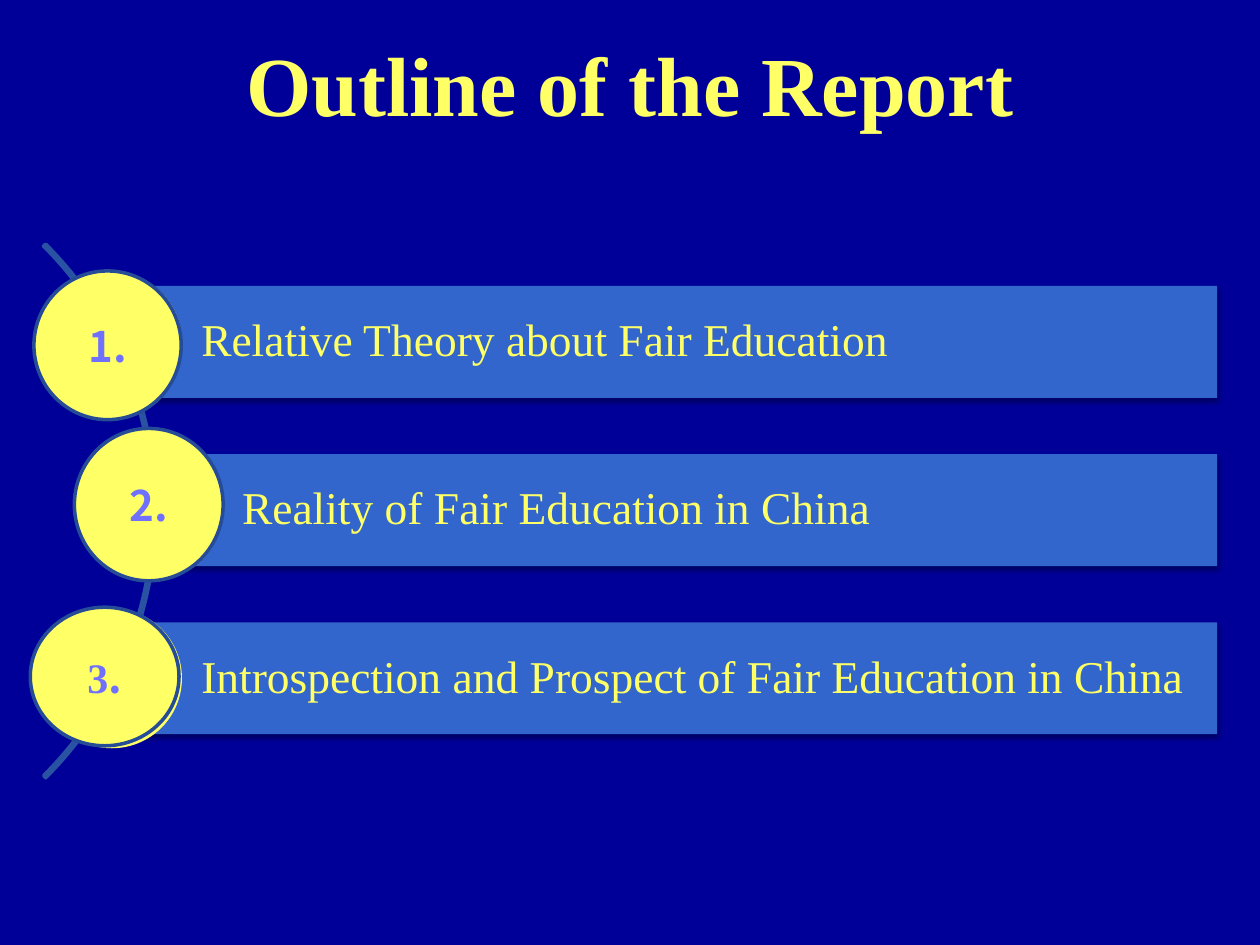
from lxml import etree
from pptx import Presentation
from pptx import util as u
from pptx.dml.color import RGBColor
from pptx.enum import shapes, text
from pptx.oxml import parse_xml
from pptx.oxml.ns import nsdecls, qn

NAVY = RGBColor(0x00, 0x00, 0x99)
YELLOW = RGBColor(0xFF, 0xFF, 0x66)
BAR_BLUE = RGBColor(0x33, 0x66, 0xCC)
ARC_BLUE = RGBColor(0x29, 0x52, 0xA3)
BADGE_EDGE = RGBColor(0x26, 0x4B, 0x97)
VIOLET = RGBColor(0x70, 0x70, 0xFF)

SERIF = "Times New Roman"
SANS = "Noto Sans CJK SC"

BAR_TOP = 163.4
BAR_PITCH = 96.1
BAR_HEIGHT = 64
BAR_RIGHT = 695.6
DISC_SIZE = 80

TOPICS = [
    (64, "Relative Theory about Fair Education"),
    (87.3, "Reality of Fair Education in China"),
    (64, "Introspection and Prospect of Fair Education in China"),
]
BADGES = [
    ((19.4, 154.8, 84.2, 85), [("1.", SANS)]),
    ((17.3, 347, 85, 79.2), [("3", SERIF), (".", SANS)]),
    ((42.5, 244.8, 85, 87.1), [("2.", SANS)]),
]


def add_shape(slide, kind, box, fill=None, line=None):
    shape = slide.shapes.add_shape(kind, *map(u.Pt, box))
    shape.shadow.inherit = False
    if fill is None:
        shape.fill.background()
    else:
        shape.fill.solid()
        shape.fill.fore_color.rgb = fill
    if line is None:
        shape.line.fill.background()
    else:
        shape.line.color.rgb = line
        shape.line.width = u.Pt(2)
    return shape


def format_run(run, name, size, color, bold=False):
    run.font.name = name
    run.font.size = u.Pt(size)
    run.font.color.rgb = color
    run.font.bold = bold
    properties = run._r.get_or_add_rPr()
    etree.SubElement(properties, qn("a:ea")).set("typeface", name)


def add_bar_shadow(shape):
    effects = shape._element.spPr.find(qn("a:effectLst"))
    effects.append(parse_xml(
        f'<a:outerShdw {nsdecls("a")} blurRad="{u.Pt(3.1)}" dist="{u.Pt(1.8)}" '
        'dir="5400000" rotWithShape="0"><a:srgbClr val="000000">'
        '<a:alpha val="35000"/></a:srgbClr></a:outerShdw>'))


def add_title(slide, wording):
    frame = slide.shapes.add_textbox(*map(u.Pt, (0, 15, 720, 65.5))).text_frame
    frame.word_wrap = True
    frame.text = wording
    paragraph = frame.paragraphs[0]
    paragraph.alignment = text.PP_ALIGN.CENTER
    format_run(paragraph.runs[0], SERIF, 48, YELLOW, True)


def add_arc(slide):
    arc = add_shape(slide, shapes.MSO_SHAPE.BLOCK_ARC,
                    (-342, 76.3, 431.3, 431.3), line=ARC_BLUE)
    for index, value in enumerate((189, 27, 0.004)):
        arc.adjustments[index] = value


def add_topic(slide, left, top, wording):
    bar = add_shape(slide, shapes.MSO_SHAPE.RECTANGLE,
                    (left, top, BAR_RIGHT - left, BAR_HEIGHT), BAR_BLUE)
    add_bar_shadow(bar)
    frame = bar.text_frame
    frame.margin_left = u.Pt(51)
    frame.margin_top = frame.margin_right = frame.margin_bottom = u.Pt(5)
    frame.vertical_anchor = text.MSO_ANCHOR.MIDDLE
    frame.word_wrap = True
    frame.text = wording
    paragraph = frame.paragraphs[0]
    paragraph.alignment = text.PP_ALIGN.LEFT
    paragraph.line_spacing = 0.9
    format_run(paragraph.runs[0], SERIF, 26, YELLOW)

    disc_top = top + (BAR_HEIGHT - DISC_SIZE) / 2
    add_shape(slide, shapes.MSO_SHAPE.OVAL,
              (left - DISC_SIZE / 2, disc_top, DISC_SIZE, DISC_SIZE), YELLOW)


def add_badge(slide, box, parts):
    badge = add_shape(slide, shapes.MSO_SHAPE.FLOWCHART_CONNECTOR,
                      box, YELLOW, BADGE_EDGE)
    badge.text_frame.vertical_anchor = text.MSO_ANCHOR.MIDDLE
    paragraph = badge.text_frame.paragraphs[0]
    paragraph.alignment = text.PP_ALIGN.CENTER
    for wording, name in parts:
        run = paragraph.add_run()
        run.text = wording
        format_run(run, name, 24, VIOLET, True)


def main():
    presentation = Presentation()
    presentation.slide_width = u.Pt(720)
    presentation.slide_height = u.Pt(540)
    slide = presentation.slides.add_slide(presentation.slide_layouts[6])
    slide.background.fill.solid()
    slide.background.fill.fore_color.rgb = NAVY

    add_title(slide, "Outline of the Report")
    add_arc(slide)
    for index, (left, wording) in enumerate(TOPICS):
        add_topic(slide, left, BAR_TOP + index * BAR_PITCH, wording)
    for box, parts in BADGES:
        add_badge(slide, box, parts)
    presentation.save("out.pptx")


if __name__ == "__main__":
    main()
